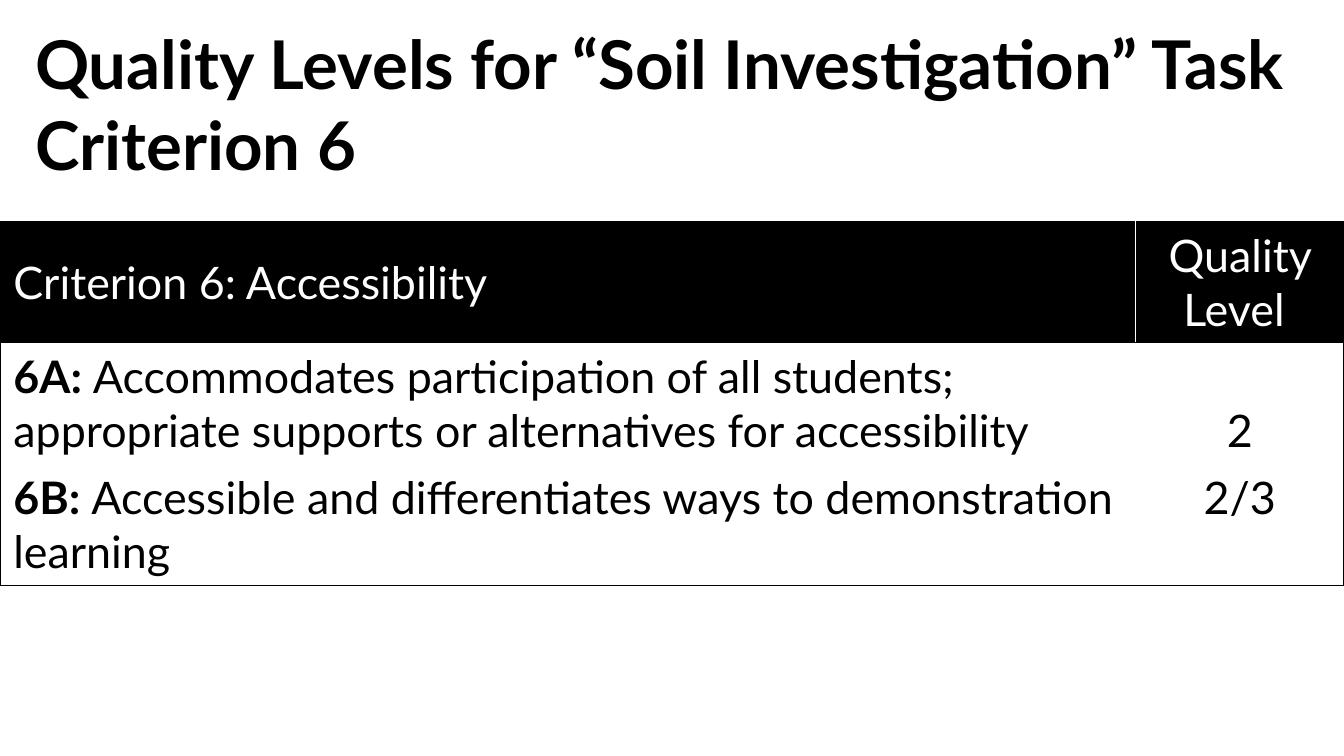
from lxml import etree
from pptx import Presentation
from pptx.dml.color import RGBColor
from pptx.enum.text import MSO_ANCHOR, MSO_AUTO_SIZE, PP_ALIGN
from pptx.oxml.ns import qn
from pptx.util import Cm, Pt

LEFT, CENTER = PP_ALIGN.LEFT, PP_ALIGN.CENTER
TOP, MIDDLE, BOTTOM = MSO_ANCHOR.TOP, MSO_ANCHOR.MIDDLE, MSO_ANCHOR.BOTTOM
BLACK = RGBColor(0x00, 0x00, 0x00)
WHITE = RGBColor(0xFF, 0xFF, 0xFF)
FONT = "Lato"


def add_run(paragraph, text, size, color, bold):
    run = paragraph.add_run()
    run.text = text
    run.font.color.rgb = color
    for attribute, value in {"name": FONT, "size": Pt(size), "bold": bold}.items():
        setattr(run.font, attribute, value)


def set_border(cell, side, color, width):
    line = etree.SubElement(cell._tc.get_or_add_tcPr(), qn(f"a:ln{side}"), w=str(Pt(width)))
    if color is None:
        etree.SubElement(line, qn("a:noFill"))
    else:
        fill = etree.SubElement(line, qn("a:solidFill"))
        etree.SubElement(fill, qn("a:srgbClr"), val=str(color))


presentation = Presentation()
presentation.slide_width, presentation.slide_height = Cm(25.4), Cm(14.29)
slide = presentation.slides.add_slide(presentation.slide_layouts[5])

title = slide.shapes.title
title_box = {"left": Cm(0.41), "top": Cm(0.2), "width": Cm(24.56), "height": Cm(3.51)}
for attribute, value in title_box.items():
    setattr(title, attribute, value)
title_format = {"word_wrap": True, "auto_size": MSO_AUTO_SIZE.NONE, "vertical_anchor": MIDDLE}
for attribute, value in title_format.items():
    setattr(title.text_frame, attribute, value)
heading = title.text_frame.paragraphs[0]
heading.alignment = LEFT
add_run(heading, "Quality Levels for “Soil Investigation” Task Criterion 6", 36, BLACK, True)

criteria = [
    [("", "Criterion 6: Accessibility", MIDDLE), ("", "Quality Level ", MIDDLE)],
    [("6A: ", "Accommodates participation of all students; appropriate supports "
      "or alternatives for accessibility", TOP), ("", "2", BOTTOM)],
    [("6B: ", "Accessible and differentiates ways to demonstration learning", TOP),
     ("", "2/3", TOP)],
]
row_height = Cm(2.29)
last_row = len(criteria) - 1
table = slide.shapes.add_table(
    len(criteria), 2, Cm(0), Cm(4.19), Cm(25.4), row_height * len(criteria)).table
table.first_row = table.horz_banding = False
for column, width in zip(table.columns, (21.46, 3.94)):
    column.width = Cm(width)

for row_index, criterion in enumerate(criteria):
    table.rows[row_index].height = row_height
    is_header = row_index == 0
    text_color = WHITE if is_header else BLACK
    divider = WHITE if is_header else None
    for column_index, (code, text, anchor) in enumerate(criterion):
        cell = table.cell(row_index, column_index)
        is_level = column_index == 1
        set_border(cell, "L", divider if is_level else BLACK, 0.75)
        set_border(cell, "R", BLACK if is_level else divider, 0.75)
        set_border(cell, "T", BLACK if row_index < 2 else None, 0.75)
        set_border(cell, "B", BLACK if row_index in (0, last_row) else None, 0.75)
        if is_header:
            cell.fill.solid()
            cell.fill.fore_color.rgb = BLACK
        else:
            cell.fill.background()
        cell.vertical_anchor = anchor
        paragraph = cell.text_frame.paragraphs[0]
        paragraph.alignment = CENTER if is_level else LEFT
        if code:
            add_run(paragraph, code, 24, text_color, True)
        add_run(paragraph, text, 24, text_color, False)

presentation.save("out.pptx")
